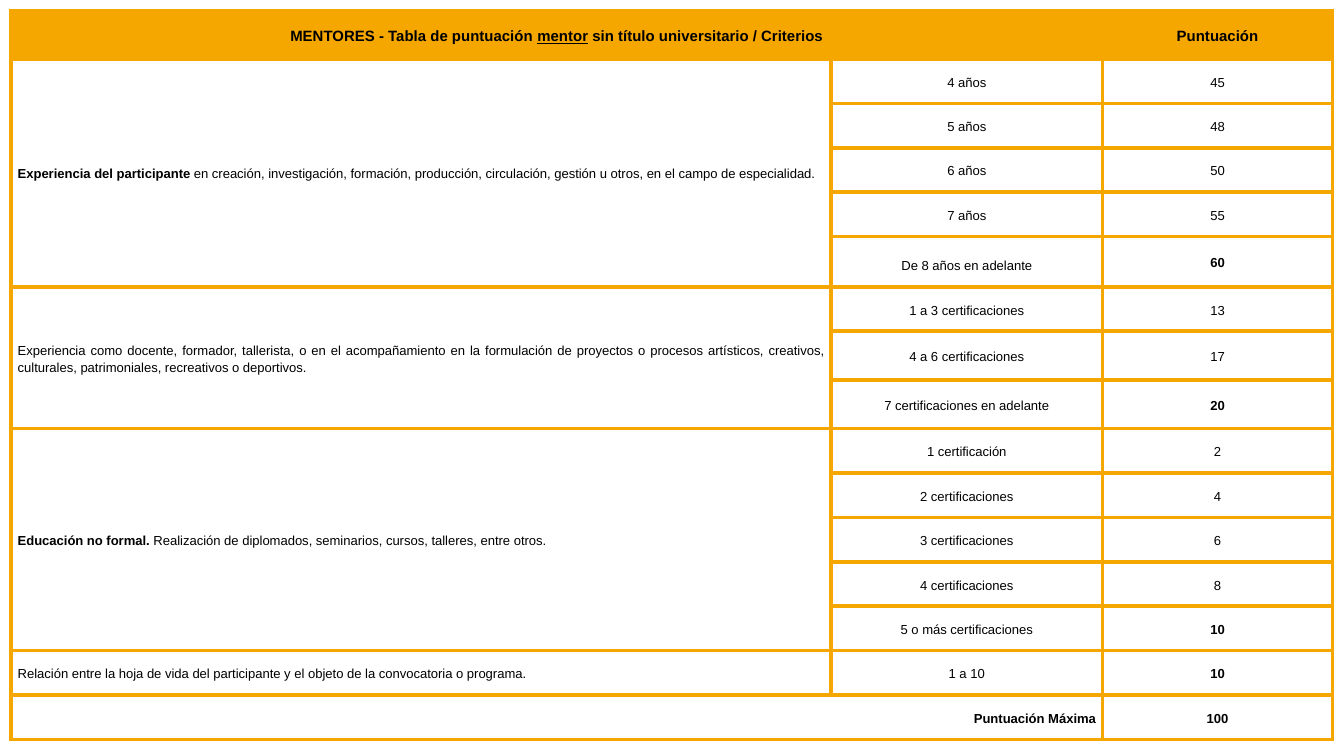
"""Build the scoring table slide for mentors without a university degree."""
from lxml import etree
from pptx import Presentation
from pptx.dml.color import RGBColor
from pptx.enum.text import MSO_ANCHOR, PP_ALIGN
from pptx.oxml.ns import qn
from pptx.util import Pt

CENTER, JUSTIFY, RIGHT = PP_ALIGN.CENTER, PP_ALIGN.JUSTIFY, PP_ALIGN.RIGHT
MIDDLE, BOTTOM = MSO_ANCHOR.MIDDLE, MSO_ANCHOR.BOTTOM
ORANGE = RGBColor(0xF5, 0xA7, 0x00)
BLACK = RGBColor(0, 0, 0)

COLUMN_WIDTHS = (439.2, 145.6, 123.2)
HEADER_HEIGHT, ROW_HEIGHT = 25.7, 23.75
TALL_ROWS = {5: 27, 7: 26.1, 8: 26.1}
BORDER_WIDTH = Pt(2.25)
MARGINS = {
    "margin_left": Pt(3.6),
    "margin_right": Pt(3.6),
    "margin_top": Pt(7.2),
    "margin_bottom": Pt(7.2),
}
BODY = {"name": "Arial", "size": Pt(7), "bold": False}
BOLD = BODY | {"bold": True}
HEADER = BOLD | {"size": Pt(8)}

HEADER_RUNS = [
    ("MENTORES - Tabla de puntuación ", HEADER),
    ("mentor", HEADER | {"underline": True}),
    (" sin título universitario / Criterios", HEADER),
]
CRITERIA = [
    (
        [
            ("Experiencia del participante ", BOLD),
            ("en creación, investigación, formación, producción, circulación, "
             "gestión u otros, en el campo de especialidad.", BODY),
        ],
        BOTTOM,
        [("4 años", 45), ("5 años", 48), ("6 años", 50), ("7 años", 55),
         ("De 8 años en adelante", 60)],
    ),
    (
        [
            ("Experiencia como docente, formador, tallerista, o en el acompañamiento "
             "en la formulación de proyectos o procesos artísticos, creativos, "
             "culturales, patrimoniales, recreativos o deportivos.", BODY),
        ],
        MIDDLE,
        [("1 a 3 certificaciones", 13), ("4 a 6 certificaciones", 17),
         ("7 certificaciones en adelante", 20)],
    ),
    (
        [
            ("Educación no formal. ", BOLD),
            ("Realización de diplomados, seminarios, cursos, talleres, entre otros.", BODY),
        ],
        MIDDLE,
        [("1 certificación", 2), ("2 certificaciones", 4), ("3 certificaciones", 6),
         ("4 certificaciones", 8), ("5 o más certificaciones", 10)],
    ),
    (
        [("Relación entre la hoja de vida del participante y el objeto de la "
          "convocatoria o programa.", BODY)],
        MIDDLE,
        [("1 a 10", 10)],
    ),
]


def apply_format(target, values):
    """Set each named attribute of the target."""
    for name, value in values.items():
        setattr(target, name, value)


def add_borders(cell):
    """Draw orange lines on the four sides of a cell."""
    properties = cell._tc.get_or_add_tcPr()
    for position, side in enumerate(("lnL", "lnR", "lnT", "lnB")):
        line = etree.Element(qn(f"a:{side}"), w=str(BORDER_WIDTH))
        fill = etree.SubElement(line, qn("a:solidFill"))
        etree.SubElement(fill, qn("a:srgbClr"), val=str(ORANGE))
        properties.insert(position, line)


def write_cell(cell, runs, alignment=CENTER, anchor=MIDDLE):
    """Write formatted runs into a cell."""
    cell.vertical_anchor = anchor
    paragraph = cell.text_frame.paragraphs[0]
    apply_format(paragraph, {"alignment": alignment, "line_spacing": 1.2})
    for text, values in runs:
        run = paragraph.add_run()
        run.text = text
        apply_format(run.font, values)
        run.font.color.rgb = BLACK


def add_score_table(slide, row_count):
    """Add the bordered grid with an orange header row."""
    heights = [HEADER_HEIGHT] + [
        TALL_ROWS.get(row, ROW_HEIGHT) for row in range(1, row_count)
    ]
    frame = slide.shapes.add_table(
        row_count, len(COLUMN_WIDTHS), Pt(5.9), Pt(5.9),
        Pt(sum(COLUMN_WIDTHS)), Pt(sum(heights)),
    )
    table = frame.table
    apply_format(table, {"first_row": False, "horz_banding": False})
    for column, width in zip(table.columns, COLUMN_WIDTHS):
        column.width = Pt(width)
    for index, (row, height) in enumerate(zip(table.rows, heights)):
        row.height = Pt(height)
        for cell in row.cells:
            apply_format(cell, MARGINS)
            if index == 0:
                cell.fill.solid()
                cell.fill.fore_color.rgb = ORANGE
            else:
                cell.fill.background()
            add_borders(cell)
    return table


def write_criterion(table, first_row, runs, anchor, levels):
    """Write one criterion with its levels, the top score in bold."""
    last_row = first_row + len(levels) - 1
    criterion = table.cell(first_row, 0)
    if last_row > first_row:
        criterion.merge(table.cell(last_row, 0))
    write_cell(criterion, runs, JUSTIFY)
    for row, (level, score) in enumerate(levels, first_row):
        write_cell(table.cell(row, 1), [(level, BODY)], anchor=anchor)
        score_format = BOLD if row == last_row else BODY
        write_cell(table.cell(row, 2), [(str(score), score_format)])
    return last_row + 1


def write_wide_row(table, row, runs, score_runs, alignment):
    """Write a row whose first two columns are merged."""
    label = table.cell(row, 0)
    label.merge(table.cell(row, 1))
    write_cell(label, runs, alignment)
    write_cell(table.cell(row, 2), score_runs)


def main():
    """Create and save the presentation."""
    presentation = Presentation()
    apply_format(presentation, {"slide_width": Pt(720), "slide_height": Pt(405)})
    slide = presentation.slides.add_slide(presentation.slide_layouts[6])
    row_count = 2 + sum(len(levels) for _, _, levels in CRITERIA)
    table = add_score_table(slide, row_count)
    write_wide_row(table, 0, HEADER_RUNS, [("Puntuación", HEADER)], CENTER)
    row = 1
    for runs, anchor, levels in CRITERIA:
        row = write_criterion(table, row, runs, anchor, levels)
    write_wide_row(table, row, [("Puntuación Máxima", BOLD)], [("100", BOLD)], RIGHT)
    presentation.save("out.pptx")


if __name__ == "__main__":
    main()
